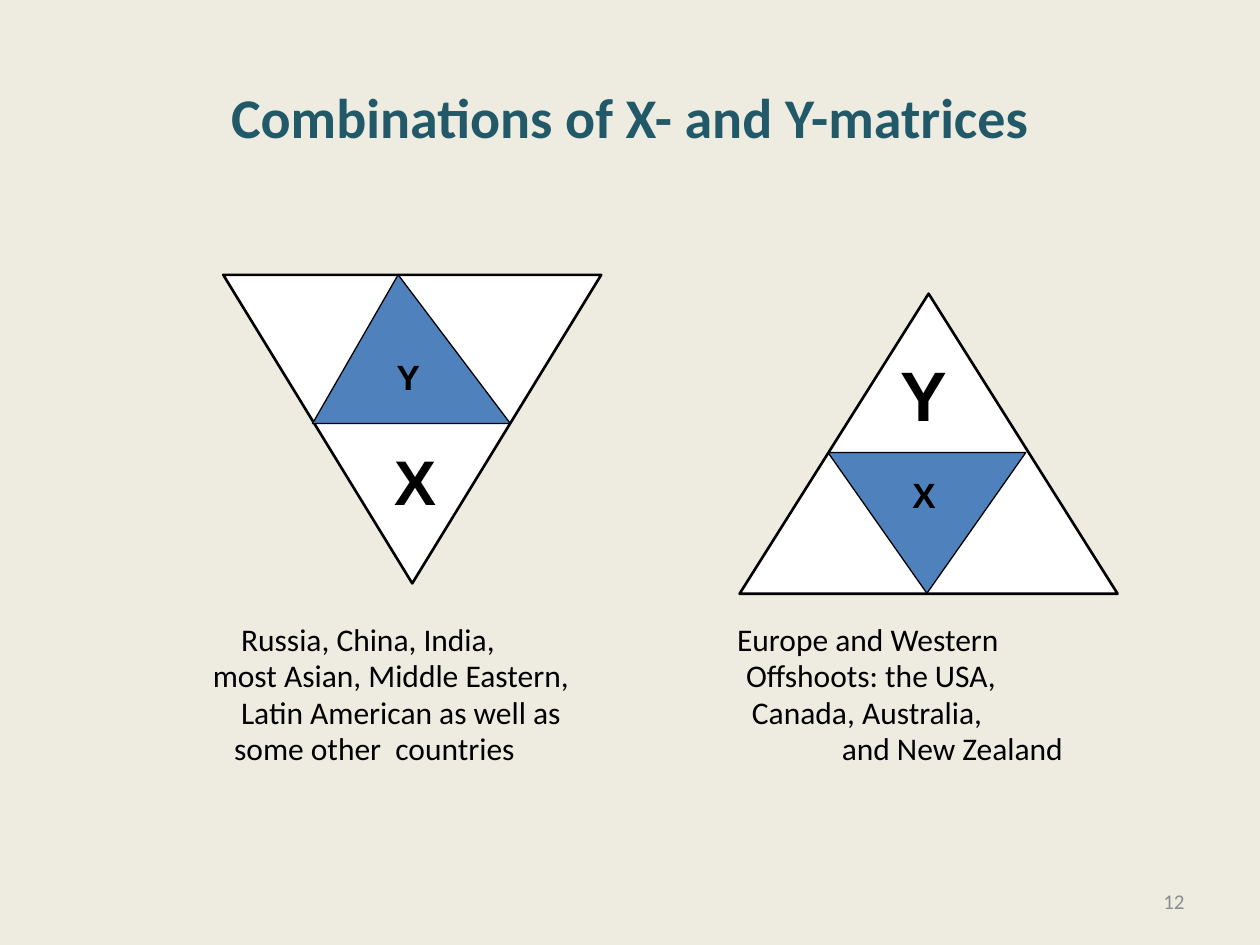
from dataclasses import dataclass

from pptx import Presentation
from pptx.dml.color import RGBColor
from pptx.enum.shapes import MSO_SHAPE as Preset
from pptx.enum.text import MSO_ANCHOR as Anchor, PP_ALIGN as Align
from pptx.util import Cm, Pt

BLACK, WHITE, BLUE = "000000", "FFFFFF", "4F81BD"


@dataclass
class Triangle:
    left: float
    top: float
    width: float
    height: float
    fill: str
    line_width: float
    inverted: bool = False
    apex: float = 0.5


@dataclass
class Letter:
    text: str
    center_x: float
    center_y: float
    size: int


@dataclass
class Caption:
    """Lines of text, each paired with its own indent in centimetres."""
    left: float
    width: float
    lines: list[tuple[str, float]]


TRIANGLES = [
    Triangle(4.5, 5.54, 7.62, 6.22, WHITE, 1.5, inverted=True),
    Triangle(14.91, 5.92, 7.62, 6.05, WHITE, 1.5),
    Triangle(6.3, 5.54, 3.99, 3, BLUE, 0.75, apex=0.433),
    Triangle(16.69, 9.12, 3.99, 2.84, BLUE, 0.75, inverted=True),
]
LETTERS = [
    Letter("Y", 8.23, 7.6, 20),
    Letter("X", 8.37, 9.68, 36),
    Letter("Y", 18.63, 7.93, 40),
    Letter("X", 18.63, 9.96, 20),
]
CAPTIONS = [
    Caption(4.29, 9.5, [
        ("Russia, China, India,", 0.57),
        ("most Asian, Middle Eastern,", 0),
        ("Latin American as well as", 0.57),
        ("some other  countries", 0.43),
    ]),
    Caption(14.86, 9, [
        ("Europe and Western", 0),
        ("Offshoots: the USA,", 0.18),
        ("Canada, Australia,", 0.3),
        ("and New Zealand", 2.11),
    ]),
]


def color(value: str) -> RGBColor:
    return RGBColor.from_string(value)


def add_span(para, text: str, size: int, font: str, tint: str, bold: bool = False) -> None:
    span = para.add_run()
    span.text = text
    span.font.size = Pt(size)
    span.font.name = font
    span.font.bold = bold
    span.font.color.rgb = color(tint)


def add_frame(page, left: float, top: float, width: float, height: float, anchor=Anchor.TOP):
    """Add a wrapping text box without side insets and return its text frame."""
    box = page.shapes.add_textbox(Cm(left), Cm(top), Cm(width), Cm(height))
    frame = box.text_frame
    frame.word_wrap = True
    frame.vertical_anchor = anchor
    frame.margin_left = frame.margin_right = 0
    return frame


def draw_triangle(page, item: Triangle) -> None:
    shape = page.shapes.add_shape(
        Preset.ISOSCELES_TRIANGLE,
        Cm(item.left), Cm(item.top), Cm(item.width), Cm(item.height))
    shape.adjustments[0] = item.apex
    shape.rotation = 180 if item.inverted else 0
    shape.shadow.inherit = False
    shape.fill.solid()
    shape.fill.fore_color.rgb = color(item.fill)
    shape.line.color.rgb = color(BLACK)
    shape.line.width = Pt(item.line_width)


def draw_letter(page, letter: Letter) -> None:
    side = 1.8
    frame = add_frame(page, letter.center_x - side / 2, letter.center_y - side / 2,
                      side, side, Anchor.MIDDLE)
    para = frame.paragraphs[0]
    para.alignment = Align.CENTER
    add_span(para, letter.text, letter.size, "Arial", BLACK, bold=True)


def draw_caption(page, caption: Caption) -> None:
    frame = add_frame(page, caption.left, 12.52, caption.width, 3.99)
    for index, (text, indent) in enumerate(caption.lines):
        para = frame.add_paragraph() if index else frame.paragraphs[0]
        para.line_spacing = 0.8
        para.space_before = Pt(3.5)
        para._p.get_or_add_pPr().set("marL", str(Cm(indent)))
        add_span(para, text, 18, "Calibri", BLACK)


def draw_title(page, text: str) -> None:
    title = page.shapes.title
    title.left, title.top, title.width, title.height = Cm(1.27), Cm(0.76), Cm(22.86), Cm(3.18)
    title.text_frame.vertical_anchor = Anchor.MIDDLE
    para = title.text_frame.paragraphs[0]
    para.alignment = Align.CENTER
    add_span(para, text, 32, "Calibri", "215968", bold=True)


def draw_page_number(page, number: str) -> None:
    frame = add_frame(page, 18.21, 17.65, 5.67, 1.02, Anchor.MIDDLE)
    para = frame.paragraphs[0]
    para.alignment = Align.RIGHT
    add_span(para, number, 12, "Calibri", "8C8C8C")


def main() -> None:
    deck = Presentation()
    deck.slide_width, deck.slide_height = Cm(25.4), Cm(19.05)
    page = deck.slides.add_slide(deck.slide_layouts.get_by_name("Title Only"))
    page.background.fill.solid()
    page.background.fill.fore_color.rgb = color("EEECE1")

    draw_title(page, "Combinations of X- and Y-matrices")
    for caption in CAPTIONS:
        draw_caption(page, caption)
    draw_page_number(page, "12")
    for triangle in TRIANGLES:
        draw_triangle(page, triangle)
    for letter in LETTERS:
        draw_letter(page, letter)
    deck.save("out.pptx")


if __name__ == "__main__":
    main()
